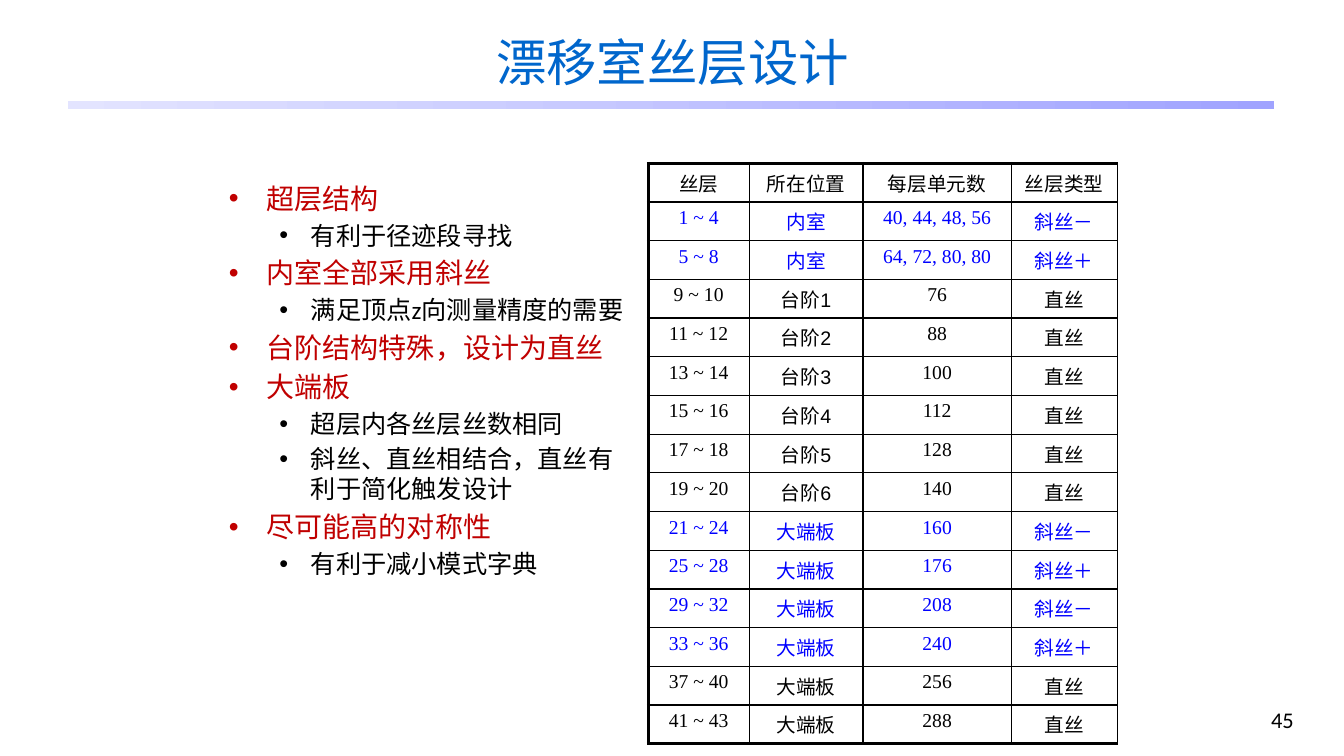
from dataclasses import dataclass

from lxml import etree
from pptx import Presentation
from pptx.dml.color import RGBColor
from pptx.enum import shapes, text
from pptx.oxml import ns
from pptx.util import Inches, Pt


@dataclass(frozen=True)
class Theme:
    heading_blue: str = "0066CC"
    point_red: str = "C00000"
    stereo_blue: str = "0000FF"
    black: str = "000000"
    rule_start: str = "E3E4FF"
    rule_end: str = "A0A3FF"
    body_font: str = "Calibri"
    label_font: str = "Arial"
    number_font: str = "Times New Roman"
    title_size: int = 36
    point_size: int = 20
    detail_size: int = 18
    page_size: int = 16
    cell_size: int = 14
    thin: float = 1
    thick: float = 2.25


@dataclass(frozen=True)
class Point:
    heading: str
    details: tuple[str, ...] = ()


@dataclass(frozen=True)
class Layer:
    wires: str
    location: str
    cells: str
    kind: str


THEME = Theme()
STEREO_MINUS, STEREO_PLUS, AXIAL = "斜丝－", "斜丝＋", "直丝"

POINTS = [
    Point("超层结构", ("有利于径迹段寻找",)),
    Point("内室全部采用斜丝", ("满足顶点z向测量精度的需要",)),
    Point("台阶结构特殊，设计为直丝"),
    Point("大端板", ("超层内各丝层丝数相同", "斜丝、直丝相结合，直丝有利于简化触发设计")),
    Point("尽可能高的对称性", ("有利于减小模式字典",)),
]

HEADER = Layer("丝层", "所在位置", "每层单元数", "丝层类型")
LAYERS = [
    Layer("1 ~ 4", "内室", "40, 44, 48, 56", STEREO_MINUS),
    Layer("5 ~ 8", "内室", "64, 72, 80, 80", STEREO_PLUS),
    Layer("9 ~ 10", "台阶1", "76", AXIAL),
    Layer("11 ~ 12", "台阶2", "88", AXIAL),
    Layer("13 ~ 14", "台阶3", "100", AXIAL),
    Layer("15 ~ 16", "台阶4", "112", AXIAL),
    Layer("17 ~ 18", "台阶5", "128", AXIAL),
    Layer("19 ~ 20", "台阶6", "140", AXIAL),
    Layer("21 ~ 24", "大端板", "160", STEREO_MINUS),
    Layer("25 ~ 28", "大端板", "176", STEREO_PLUS),
    Layer("29 ~ 32", "大端板", "208", STEREO_MINUS),
    Layer("33 ~ 36", "大端板", "240", STEREO_PLUS),
    Layer("37 ~ 40", "大端板", "256", AXIAL),
    Layer("41 ~ 43", "大端板", "288", AXIAL),
]
COLUMN_WIDTHS = (1, 1.13, 1.47, 1.05)
ROW_HEIGHT = 0.35


def place(shape, left: float, top: float, width: float, height: float) -> None:
    shape.left, shape.top = Inches(left), Inches(top)
    shape.width, shape.height = Inches(width), Inches(height)


def write(para, words: str, *, size: int, color: str = THEME.black,
          font: str = THEME.body_font, align=None) -> None:
    para.alignment = align
    span = para.add_run()
    span.text = words
    span.font.size = Pt(size)
    span.font.name = font
    span.font.color.rgb = RGBColor.from_string(color)


def set_bullet(para, mark: str = "•") -> None:
    properties = para._p.get_or_add_pPr()
    etree.SubElement(properties, ns.qn("a:buFont"), typeface=THEME.label_font)
    etree.SubElement(properties, ns.qn("a:buChar"), char=mark)


def set_borders(cell, **widths: float) -> None:
    """Draw the borders named L, R, T and B with the given widths in points."""
    properties = cell._tc.get_or_add_tcPr()
    for side, width in widths.items():
        line = etree.SubElement(properties, ns.qn(f"a:ln{side}"), w=str(Pt(width)))
        fill = etree.SubElement(line, ns.qn("a:solidFill"))
        etree.SubElement(fill, ns.qn("a:srgbClr"), val=THEME.black)


def add_rule(page) -> None:
    rule = page.shapes.add_shape(shapes.MSO_SHAPE.RECTANGLE, 0, 0, 0, 0)
    place(rule, 0.67, 1, 11.97, 0.08)
    rule.shadow.inherit = False
    rule.line.fill.background()
    rule.fill.gradient()
    rule.fill.gradient_angle = 0
    for stop, color in zip(rule.fill.gradient_stops, (THEME.rule_start, THEME.rule_end)):
        stop.color.rgb = RGBColor.from_string(color)


def add_title(page, words: str) -> None:
    title = page.shapes.title
    place(title, 0.67, 0.21, 12, 0.79)
    title.text_frame.vertical_anchor = text.MSO_ANCHOR.MIDDLE
    write(title.text_frame.paragraphs[0], words, size=THEME.title_size,
          color=THEME.heading_blue, align=text.PP_ALIGN.CENTER)


def add_points(page, points: list[Point]) -> None:
    body = page.placeholders[1]
    place(body, 2.17, 1.75, 4.26, 4.95)
    frame = body.text_frame
    for index, point in enumerate(points):
        para = frame.add_paragraph() if index else frame.paragraphs[0]
        write(para, point.heading, size=THEME.point_size, color=THEME.point_red)
        set_bullet(para)
        for detail in point.details:
            para = frame.add_paragraph()
            para.level = 1
            write(para, detail, size=THEME.detail_size)
            set_bullet(para)


def add_layer_table(page, layers: list[Layer]) -> None:
    rows = [HEADER, *layers]
    grid = page.shapes.add_table(
        len(rows), len(COLUMN_WIDTHS), Inches(6.43), Inches(1.62),
        Inches(sum(COLUMN_WIDTHS)), Inches(ROW_HEIGHT * len(rows))).table
    for column, width in zip(grid.columns, COLUMN_WIDTHS):
        column.width = Inches(width)
    for row_index, layer in enumerate(rows):
        grid.rows[row_index].height = Inches(ROW_HEIGHT)
        is_header = row_index == 0
        is_stereo = layer.kind in (STEREO_MINUS, STEREO_PLUS)
        values = (layer.wires, layer.location, layer.cells, layer.kind)
        for column_index, value in enumerate(values):
            cell = grid.cell(row_index, column_index)
            set_borders(cell,
                        L=THEME.thin if column_index else THEME.thick,
                        R=THEME.thin,
                        T=THEME.thick if is_header else THEME.thin,
                        B=THEME.thick if layer is rows[-1] else THEME.thin)
            cell.fill.background()
            cell.vertical_anchor = text.MSO_ANCHOR.MIDDLE if is_header else text.MSO_ANCHOR.TOP
            is_number = column_index in (0, 2) and not is_header
            write(cell.text_frame.paragraphs[0], value, size=THEME.cell_size,
                  color=THEME.stereo_blue if is_stereo else THEME.black,
                  font=THEME.number_font if is_number else THEME.label_font,
                  align=text.PP_ALIGN.CENTER)


def add_page_number(page, number: str) -> None:
    box = page.shapes.add_textbox(0, 0, 0, 0)
    place(box, 9.82, 6.94, 3.11, 0.4)
    box.text_frame.word_wrap = True
    box.text_frame.vertical_anchor = text.MSO_ANCHOR.MIDDLE
    write(box.text_frame.paragraphs[0], number, size=THEME.page_size,
          align=text.PP_ALIGN.RIGHT)


def main() -> None:
    deck = Presentation()
    deck.slide_width, deck.slide_height = Inches(13.33), Inches(7.5)
    page = deck.slides.add_slide(deck.slide_layouts[1])
    # Heading
    add_rule(page)
    add_title(page, "漂移室丝层设计")
    # Design points and wire layers
    add_points(page, POINTS)
    add_layer_table(page, LAYERS)
    # Footer
    add_page_number(page, "45")
    deck.save("out.pptx")


if __name__ == "__main__":
    main()
